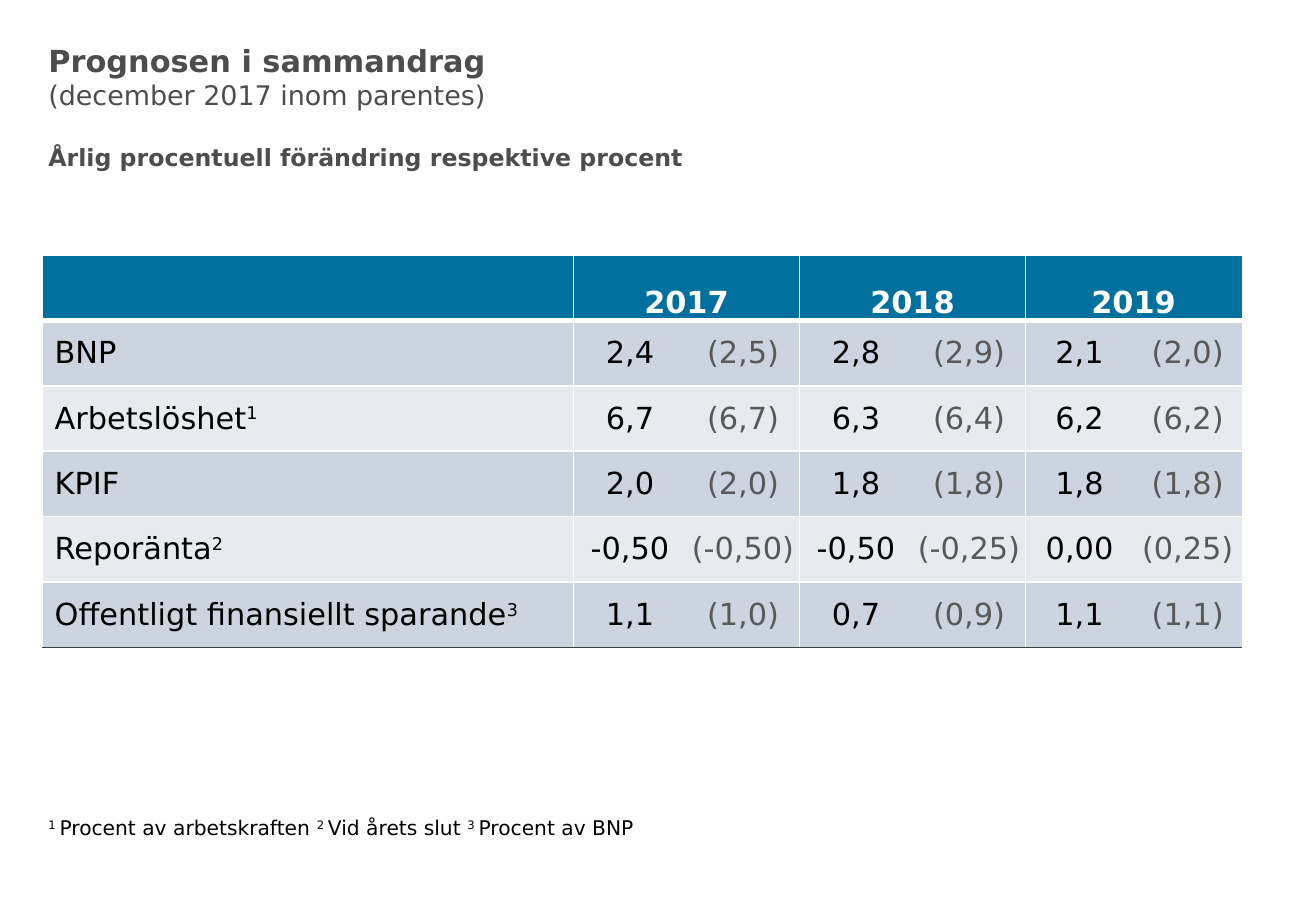
from dataclasses import dataclass

from lxml.etree import SubElement
from pptx import Presentation
from pptx.dml.color import RGBColor
from pptx.enum.text import MSO_ANCHOR as Anchor, PP_ALIGN as Align
from pptx.oxml.ns import qn
from pptx.util import Inches, Pt


@dataclass(frozen=True)
class Theme:
    font: str = "DejaVu Sans"
    heading: str = "4D4D4D"
    text: str = "000000"
    previous: str = "595959"
    white: str = "FFFFFF"
    header: str = "00709E"
    bands: tuple = ("CCD5DF", "E7EBF0")
    bottom_rule: str = "404040"
    title_size: int = 18
    subtitle_size: int = 16
    unit_size: int = 14
    table_size: int = 18
    note_size: int = 12


THEME = Theme()
YEARS = ["2017", "2018", "2019"]
FORECASTS = [
    ("BNP", "", "2,4 (2,5) 2,8 (2,9) 2,1 (2,0)"),
    ("Arbetslöshet", "1", "6,7 (6,7) 6,3 (6,4) 6,2 (6,2)"),
    ("KPIF", "", "2,0 (2,0) 1,8 (1,8) 1,8 (1,8)"),
    ("Reporänta", "2", "-0,50 (-0,50) -0,50 (-0,25) 0,00 (0,25)"),
    ("Offentligt finansiellt sparande", "3", "1,1 (1,0) 0,7 (0,9) 1,1 (1,1)"),
]
NOTES = [
    ("1 ", "Procent av arbetskraften "),
    ("2 ", "Vid årets slut "),
    ("3 ", "Procent av BNP"),
]
COLUMN_WIDTHS = [4.37] + [0.93] * 4 + [0.89] * 2
TABLE_HEIGHT = 3.23


def add_span(para, text, size, color, bold=False, raised=False):
    span = para.add_run()
    span.text = text
    span.font.name = THEME.font
    span.font.size = Pt(size)
    span.font.bold = bold
    span.font.color.rgb = RGBColor.from_string(color)
    if raised:
        span.font._element.set("baseline", "30000")


def add_text_frame(page, left, top, width, height):
    box = page.shapes.add_textbox(Inches(left), Inches(top), Inches(width), Inches(height))
    box.text_frame.word_wrap = True
    return box.text_frame


def add_heading(page):
    frame = add_text_frame(page, 0.3, 0.3, 10, 1.2)
    lines = [
        ("Prognosen i sammandrag", THEME.title_size, True, 0),
        ("(december 2017 inom parentes)", THEME.subtitle_size, False, 0),
        ("Årlig procentuell förändring respektive procent", THEME.unit_size, True, 18.6),
    ]
    for index, (text, size, bold, gap) in enumerate(lines):
        para = frame.add_paragraph() if index else frame.paragraphs[0]
        para.space_before = Pt(gap)
        add_span(para, text, size, THEME.heading, bold)


def add_notes(page):
    para = add_text_frame(page, 0.3, 6.66, 9.53, 0.68).paragraphs[0]
    for mark, text in NOTES:
        add_span(para, mark, THEME.note_size, THEME.text, raised=True)
        add_span(para, text, THEME.note_size, THEME.text)


def set_borders(cell, borders):
    """Draw each edge given as (color, points); None leaves it open."""
    properties = cell._tc.get_or_add_tcPr()
    for edge in ("L", "R", "T", "B"):
        line = SubElement(properties, qn(f"a:ln{edge}"))
        if borders[edge] is None:
            SubElement(line, qn("a:noFill"))
            continue
        color, points = borders[edge]
        line.set("w", str(Pt(points)))
        fill = SubElement(line, qn("a:solidFill"))
        SubElement(fill, qn("a:srgbClr")).set("val", color)


def style_cell(cell, row, column):
    thin, thick = (THEME.white, 1), (THEME.white, 3)
    last_row, last_column = len(FORECASTS), len(COLUMN_WIDTHS) - 1
    starts_year = column % 2 == 1
    bottom = {0: thick, last_row: (THEME.bottom_rule, 1)}.get(row, thin)
    set_borders(cell, {
        "L": thin if starts_year or column == 0 else None,
        "R": None if starts_year or column == last_column else thin,
        "T": thick if row == 1 else thin,
        "B": bottom,
    })
    cell.fill.solid()
    color = THEME.bands[(row - 1) % 2] if row else THEME.header
    cell.fill.fore_color.rgb = RGBColor.from_string(color)
    cell.vertical_anchor = Anchor.MIDDLE if row else Anchor.BOTTOM
    if column:
        cell.margin_left = cell.margin_right = cell.margin_top = cell.margin_bottom = 0
        cell.text_frame.paragraphs[0].alignment = Align.CENTER


def add_forecast_table(page):
    row_count = len(FORECASTS) + 1
    table = page.shapes.add_table(
        row_count, len(COLUMN_WIDTHS), Inches(0.35), Inches(2.1),
        Inches(sum(COLUMN_WIDTHS)), Inches(TABLE_HEIGHT)).table
    for column, width in zip(table.columns, COLUMN_WIDTHS):
        column.width = Inches(width)
    for row in range(row_count):
        table.rows[row].height = Inches(TABLE_HEIGHT / row_count)
        for column in range(len(COLUMN_WIDTHS)):
            style_cell(table.cell(row, column), row, column)

    for index, year in enumerate(YEARS):
        cell = table.cell(0, 2 * index + 1)
        cell.merge(table.cell(0, 2 * index + 2))
        add_span(cell.text_frame.paragraphs[0], year, THEME.table_size, THEME.white, bold=True)

    for row, (label, mark, values) in enumerate(FORECASTS, start=1):
        para = table.cell(row, 0).text_frame.paragraphs[0]
        add_span(para, label, THEME.table_size, THEME.text)
        if mark:
            add_span(para, mark, THEME.table_size, THEME.text, raised=True)
        for column, value in enumerate(values.split(), start=1):
            color = THEME.text if column % 2 else THEME.previous
            para = table.cell(row, column).text_frame.paragraphs[0]
            add_span(para, value, THEME.table_size, color)


def main():
    deck = Presentation()
    deck.slide_width, deck.slide_height = Inches(10.83), Inches(7.5)
    page = deck.slides.add_slide(deck.slide_layouts[6])
    add_heading(page)
    add_notes(page)
    add_forecast_table(page)
    deck.save("out.pptx")


if __name__ == "__main__":
    main()
